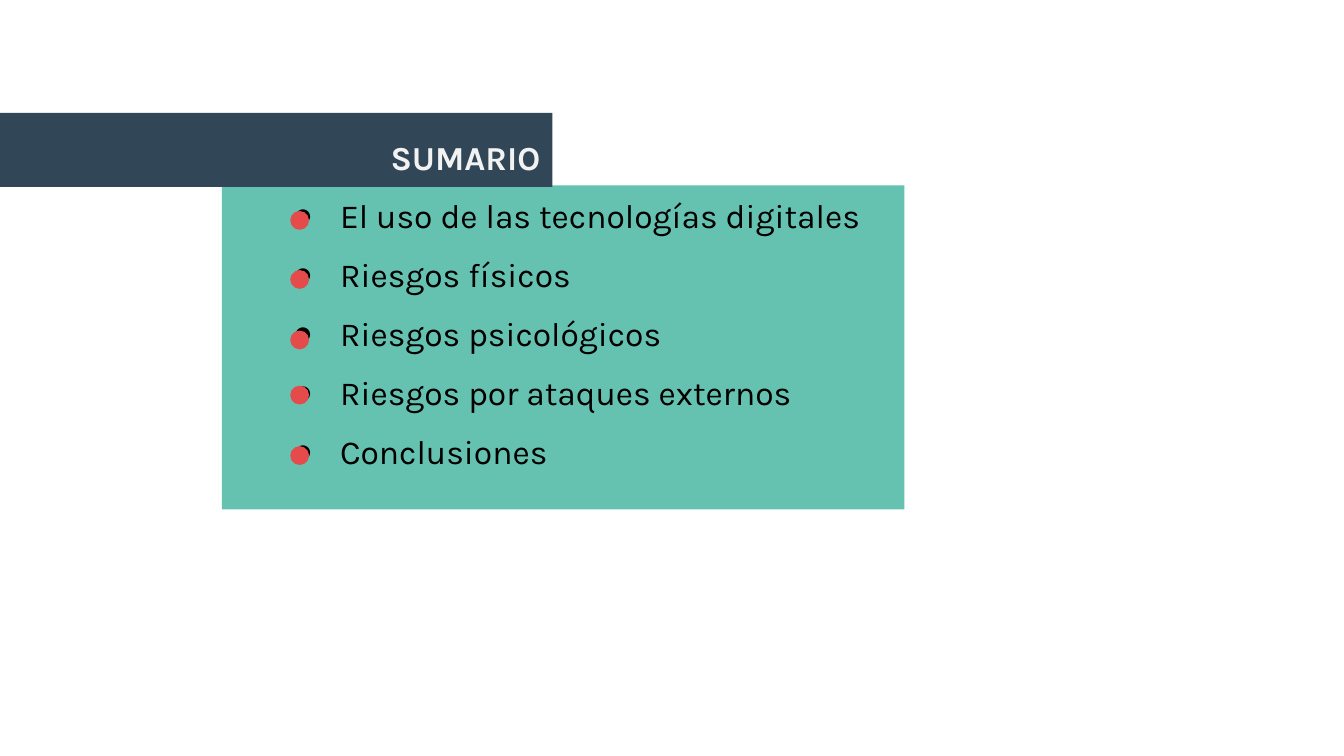
"""Build the summary slide: a title band above a panel with a bulleted list."""
from lxml import etree
from pptx import Presentation, util as u
from pptx.dml.color import RGBColor
from pptx.enum import shapes, text
from pptx.oxml.ns import qn

TEAL = RGBColor(0x65, 0xC1, 0xB0)
NAVY = RGBColor(0x31, 0x46, 0x56)
RED = RGBColor(0xE5, 0x4B, 0x4A)
PALE = RGBColor(0xF2, 0xF2, 0xF2)
BLACK = RGBColor(0, 0, 0)
ITEMS = ["El uso de las tecnologías digitales", "Riesgos físicos",
         "Riesgos psicológicos", "Riesgos por ataques externos", "Conclusiones"]
DOT_TOPS = [1.57, 2.01, 2.46, 2.87, 3.32]
DOT = 0.14


def add_shape(kind, box, color):
    sp = s.shapes.add_shape(kind, *[u.Inches(v) for v in box])
    sp.fill.solid()
    sp.fill.fore_color.rgb = color
    sp.line.fill.background()
    sp.shadow.inherit = False
    return sp


def write(sp, lines, box, color, bold=False, align=text.PP_ALIGN.LEFT, gap=0, bullet=None):
    sp.left, sp.top, sp.width, sp.height = [u.Inches(v) for v in box]
    tf = sp.text_frame
    tf.word_wrap = True
    tf.auto_size = text.MSO_AUTO_SIZE.NONE
    tf.vertical_anchor = text.MSO_ANCHOR.TOP
    tf.margin_left = tf.margin_right = tf.margin_top = tf.margin_bottom = u.Inches(0.1)
    for i, line in enumerate(lines):
        p = tf.add_paragraph() if i else tf.paragraphs[0]
        p.alignment = align
        p.line_spacing = 1.0
        p.space_before = u.Pt(gap if i else 0)
        r = p.add_run()
        r.text = line
        r.font.name, r.font.size, r.font.bold = "Karla", u.Pt(18), bold
        r.font.color.rgb = color
        if bullet:
            pPr = p._p.get_or_add_pPr()
            pPr.set("marL", str(u.Inches(0.5)))
            pPr.set("indent", str(u.Inches(-0.35)))
            clr = etree.SubElement(pPr, qn("a:buClr"))
            etree.SubElement(clr, qn("a:srgbClr"), val=str(color))
            etree.SubElement(pPr, qn("a:buFont"), typeface="Arial")
            etree.SubElement(pPr, qn("a:buChar"), char=bullet)


prs = Presentation()
prs.slide_width = u.Inches(10)
prs.slide_height = prs.slide_width * 9 // 16
s = prs.slides.add_slide(prs.slide_layouts[1])
title, body = s.shapes.title, s.placeholders[1]

panel = add_shape(shapes.MSO_SHAPE.RECTANGLE, (1.65, 1.38, 5.08, 2.41), TEAL)
band = add_shape(shapes.MSO_SHAPE.RECTANGLE, (0, 0.84, 4.11, 0.55), NAVY)
for sp in (panel, band):
    title._element.addprevious(sp._element)

write(title, ["SUMARIO"], (1.8, 0.92, 2.32, 0.36), PALE, bold=True,
      align=text.PP_ALIGN.RIGHT)
write(body, ITEMS, (1.93, 1.35, 4.68, 2.41), BLACK, gap=10, bullet="●")

for top in DOT_TOPS:
    add_shape(shapes.MSO_SHAPE.OVAL, (2.16, top, DOT, DOT), RED)

prs.save("out.pptx")
